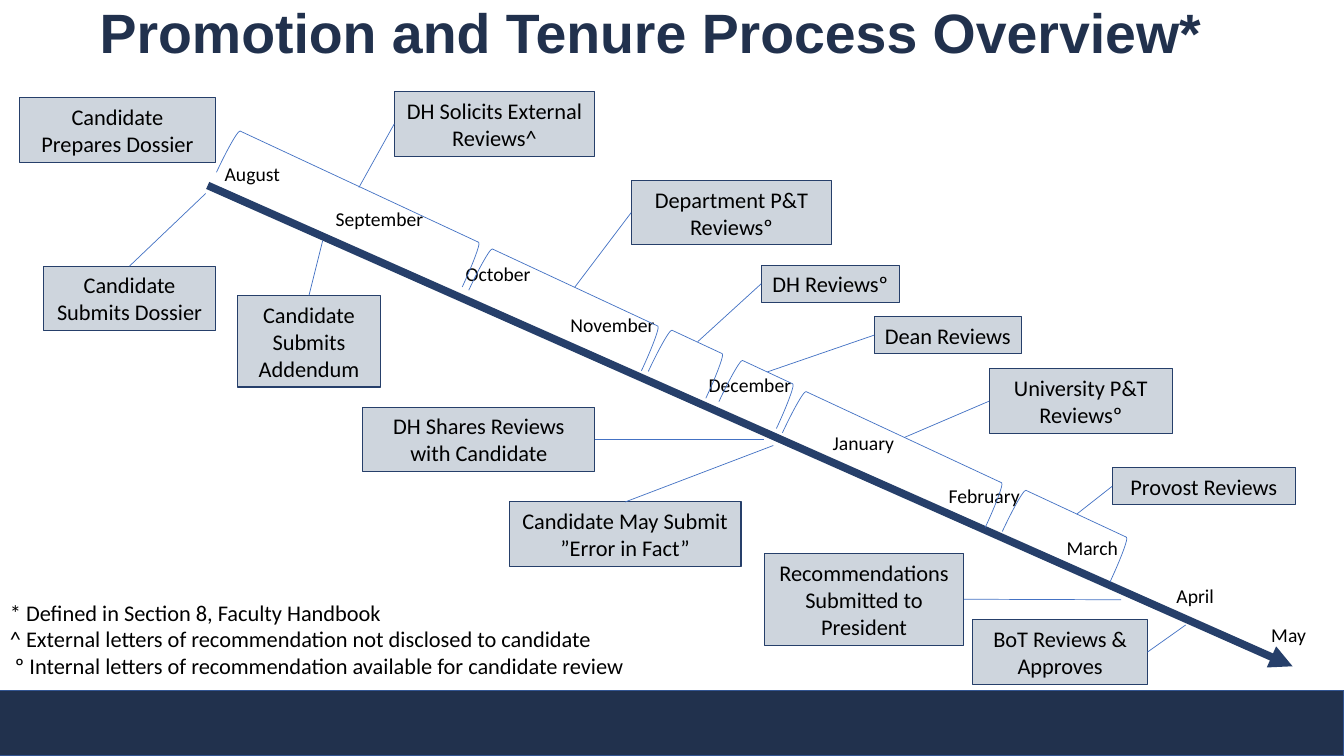
from lxml import etree
from pptx import Presentation
from pptx.dml.color import RGBColor
from pptx.enum import shapes, text
from pptx.oxml import ns
from pptx.util import Inches, Pt

NAVY = RGBColor(0x21, 0x31, 0x4D)
FOOTER_EDGE = RGBColor(0x32, 0x54, 0x91)
ARROW = RGBColor(0x26, 0x3F, 0x6A)
LEADER = RGBColor(0x44, 0x72, 0xC4)
BOX_FILL = RGBColor(0xCE, 0xD5, 0xDD)
BLACK = RGBColor(0, 0, 0)

TOP, LEFT, BOTTOM, RIGHT = range(4)

MONTHS = [
    ("August", 2.13, 0.66, 0.83), ("September", 3.23, 1.1, 1.1),
    ("October", 4.52, 1.65, 0.87), ("November", 5.56, 2.16, 1.05),
    ("December", 6.93, 2.75, 1.05), ("January", 8.16, 3.33, 0.83),
    ("February", 9.31, 3.85, 0.97), ("March", 10.48, 4.37, 0.83),
    ("April", 11.57, 4.84, 0.61), ("May", 12.51, 5.23, 0.59),
]
BRACKETS = [
    (3.23, -0.18, 2.69), (5.37, 1.22, 1.89), (6.58, 2.39, 0.63),
    (7.28, 2.69, 0.63), (8.63, 2.54, 2.22), (10.34, 3.82, 1.18),
]
STEPS = [
    ("Candidate Prepares Dossier", 0.19, 0.07, 1.95, 2, None, None),
    ("Candidate Submits Dossier", 0.43, 1.74, 1.71, 2, TOP, (2.04, 1.02)),
    ("Candidate Submits Addendum", 2.36, 2.03, 1.41, 3, TOP, (3.2, 1.49)),
    ("DH Solicits External Reviews^", 3.91, 0.01, 1.99, 2, LEFT, (3.56, 0.96)),
    ("Department P&T Reviewsº", 6.26, 0.89, 1.99, 2, LEFT, (5.7, 1.95)),
    ("DH Reviewsº", 7.55, 1.73, 1.37, 1, LEFT, (6.92, 2.49)),
    ("Dean Reviews", 8.67, 2.24, 1.46, 1, LEFT, (7.61, 2.79)),
    ("University P&T Reviewsº", 9.81, 2.76, 1.82, 2, LEFT, (8.97, 3.44)),
    ("Provost Reviews", 11.03, 3.74, 1.82, 1, LEFT, (10.68, 4.2)),
    ("DH Shares Reviews with Candidate", 3.6, 3.14, 2.3, 2, RIGHT, (7.58, 3.46)),
    ("Candidate May Submit ”Error in Fact”", 5.05, 4.08, 2.3, 2, TOP, (7.67, 3.52)),
    ("Recommendations Submitted to President", 7.58, 4.59, 1.98, 3, RIGHT, (11.12, 5.05)),
    ("BoT Reviews & Approves", 9.65, 5.25, 1.73, 2, RIGHT, (11.76, 5.3)),
]
NOTES = [
    "* Defined in Section 8, Faculty Handbook",
    "^ External letters of recommendation not disclosed to candidate",
    " º Internal letters of recommendation available for candidate review",
]


def fill_text(sp, lines, size, color=BLACK, font="Calibri", bold=False,
              align=text.PP_ALIGN.LEFT):
    tf = sp.text_frame
    tf.word_wrap = True
    tf.text = "\n".join(lines)
    for p in tf.paragraphs:
        p.alignment = align
        for r in p.runs:
            r.font.size, r.font.name, r.font.bold = Pt(size), font, bold
            r.font.color.rgb = color
    return tf


def add_text(s, x, y, w, h, lines, size, **style):
    sp = s.shapes.add_textbox(Inches(x), Inches(y), Inches(w), Inches(h))
    return fill_text(sp, lines, size, **style)


def add_shape(s, kind, x, y, w, h, fill, line, width):
    sp = s.shapes.add_shape(kind, Inches(x), Inches(y), Inches(w), Inches(h))
    sp.shadow.inherit = False
    if fill is None:
        sp.fill.background()
    else:
        sp.fill.solid()
        sp.fill.fore_color.rgb = fill
    sp.line.color.rgb = line
    sp.line.width = Pt(width)
    return sp


def add_line(s, x1, y1, x2, y2, color, width):
    c = s.shapes.add_connector(shapes.MSO_CONNECTOR.STRAIGHT, Inches(x1),
                               Inches(y1), Inches(x2), Inches(y2))
    c.line.color.rgb = color
    c.line.width = Pt(width)
    etree.SubElement(c._element.spPr, ns.qn("a:effectLst"))
    return c


def footer(s, x, y, w, h):
    add_shape(s, shapes.MSO_SHAPE.RECTANGLE, x, y, w, h, NAVY, FOOTER_EDGE, 1)


def title(s, x, y, w, h):
    tf = add_text(s, x, y, w, h, ["Promotion and Tenure Process Overview*"],
                  39.6, color=NAVY, font="Arial", bold=True)
    tf.vertical_anchor = text.MSO_ANCHOR.MIDDLE
    tf.paragraphs[0].line_spacing = 0.9


def step(s, x, y, w, line_count, label, side, target):
    sp = add_shape(s, shapes.MSO_SHAPE.RECTANGLE, x, y, w,
                   0.1 + 0.27 * line_count, BOX_FILL, ARROW, 0.75)
    tf = fill_text(sp, [label], 16, align=text.PP_ALIGN.CENTER)
    tf.vertical_anchor = text.MSO_ANCHOR.MIDDLE
    if target:
        c = add_line(s, x, y, *target, LEADER, 0.5)
        c.begin_connect(sp, side)


def timeline(s, x, y):
    arrow = add_line(s, x + 2.06, y + 0.94, x + 12.82, y + 5.71, ARROW, 5.5)
    etree.SubElement(arrow.line._get_or_add_ln(), ns.qn("a:tailEnd"), type="triangle")
    for month, dx, dy, w in MONTHS:
        add_text(s, x + dx, y + dy, w, 0.34, [month], 14)
    for dx, dy, length in BRACKETS:
        sp = add_shape(s, shapes.MSO_SHAPE.RIGHT_BRACKET, x + dx, y + dy,
                       0.47, length, None, LEADER, 0.5)
        sp.rotation = 295
    for label, dx, dy, w, line_count, side, end in STEPS:
        target = end and (x + end[0], y + end[1])
        step(s, x + dx, y + dy, w, line_count, label, side, target)


def main():
    prs = Presentation()
    prs.slide_width, prs.slide_height = Inches(13.33), Inches(7.5)
    s = prs.slides.add_slide(prs.slide_layouts[6])
    footer(s, -0.01, 6.85, 13.34, 0.65)
    title(s, 0.89, 0.08, 11.5, 0.55)
    timeline(s, 0, 0.9)
    add_text(s, 0, 5.89, 6.51, 0.91, NOTES, 16)
    prs.save("out.pptx")


if __name__ == "__main__":
    main()
